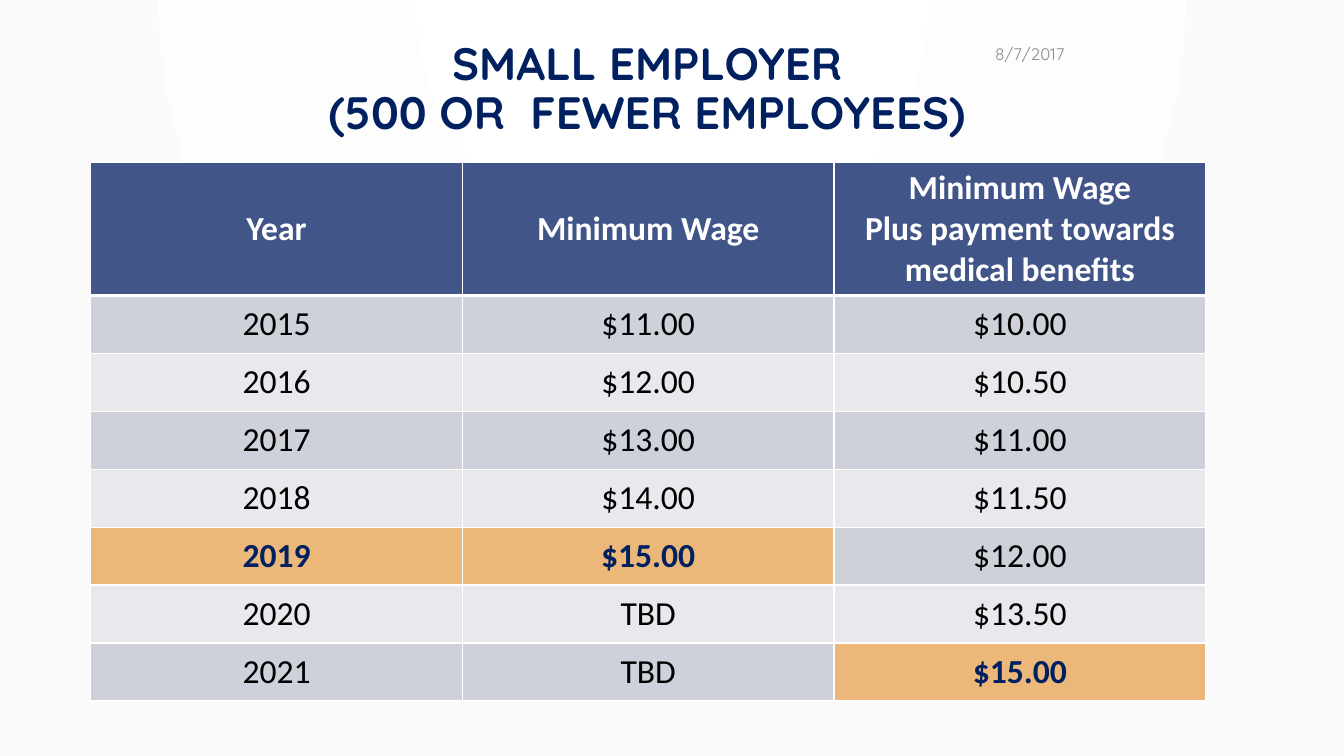
from dataclasses import dataclass

from lxml.etree import SubElement
from pptx import Presentation
from pptx.dml.color import RGBColor
from pptx.enum.text import MSO_ANCHOR, MSO_AUTO_SIZE, PP_ALIGN
from pptx.oxml import parse_xml
from pptx.oxml.ns import nsdecls, qn
from pptx.util import Pt

NAVY = RGBColor(0x00, 0x20, 0x60)
BLACK = RGBColor(0x00, 0x00, 0x00)
WHITE = RGBColor(0xFF, 0xFF, 0xFF)
PALE = RGBColor(0xFA, 0xFA, 0xFA)
GRAY = RGBColor(0x8C, 0x8C, 0x8C)
HEADER_BLUE = RGBColor(0x41, 0x55, 0x88)
BAND_DARK = RGBColor(0xCF, 0xD1, 0xDA)
BAND_LIGHT = RGBColor(0xE9, 0xE9, 0xED)
ORANGE = RGBColor(0xEC, 0xB8, 0x7A)


@dataclass(frozen=True)
class TextStyle:
    font: str
    size: float
    color: RGBColor
    bold: bool = False
    align: PP_ALIGN = PP_ALIGN.CENTER


@dataclass(frozen=True)
class CellStyle:
    fill: RGBColor
    text: TextStyle


TITLE = TextStyle("Quicksand", 32.4, NAVY, bold=True)
DATE = TextStyle("Quicksand", 12, GRAY, align=PP_ALIGN.RIGHT)
PLAIN = TextStyle("Calibri", 24, BLACK)
HEADER = CellStyle(HEADER_BLUE, TextStyle("Calibri", 24, WHITE, bold=True))
BANDS = (CellStyle(BAND_DARK, PLAIN), CellStyle(BAND_LIGHT, PLAIN))
REACHED = CellStyle(ORANGE, TextStyle("Calibri", 24, NAVY, bold=True))

WAGES = [
    ("Year", "Minimum Wage", "Minimum Wage\nPlus payment towards medical benefits"),
    ("2015", "$11.00", "$10.00"),
    ("2016", "$12.00", "$10.50"),
    ("2017", "$13.00", "$11.00"),
    ("2018", "$14.00", "$11.50"),
    ("2019", "$15.00", "$12.00"),
    ("2020", "TBD", "$13.50"),
    ("2021", "TBD", "$15.00"),
]
REACHED_CELLS = {(5, 0), (5, 1), (7, 2)}
COLUMN_WIDTH, HEADER_HEIGHT, ROW_HEIGHT = 265.5, 92.2, 41.4
THIN, THICK = 1, 3


def write_text(frame, text: str, style: TextStyle) -> None:
    frame.text = text
    formats = {"name": style.font, "size": Pt(style.size), "bold": style.bold}
    for paragraph in frame.paragraphs:
        paragraph.alignment = style.align
        for run in paragraph.runs:
            for attribute, value in formats.items():
                setattr(run.font, attribute, value)
            run.font.color.rgb = style.color


def place(shape, left: float, top: float, width: float, height: float) -> None:
    box = {"left": left, "top": top, "width": width, "height": height}
    for attribute, value in box.items():
        setattr(shape, attribute, Pt(value))


def set_borders(cell, row: int) -> None:
    widths = {
        "lnL": THIN,
        "lnR": THIN,
        "lnT": THICK if row == 1 else THIN,
        "lnB": THICK if row == 0 else THIN,
    }
    properties = cell._tc.get_or_add_tcPr()
    for index, (side, width) in enumerate(widths.items()):
        line = parse_xml(f'<a:{side} {nsdecls("a")} w="{Pt(width)}"/>')
        fill = SubElement(line, qn("a:solidFill"))
        SubElement(fill, qn("a:srgbClr"), val=str(WHITE))
        properties.insert(index, line)


def cell_style(row: int, column: int) -> CellStyle:
    if row == 0:
        return HEADER
    if (row, column) in REACHED_CELLS:
        return REACHED
    return BANDS[(row - 1) % 2]


def add_background(slide) -> None:
    fill = slide.background.fill
    fill.gradient()
    for stop, color in zip(fill.gradient_stops, (WHITE, PALE)):
        stop.color.rgb = color
    gradient = slide.element.find(".//" + qn("a:gradFill"))
    radial = parse_xml(
        f'<a:path {nsdecls("a")} path="circle">'
        '<a:fillToRect l="43000" t="0" r="43000" b="100000"/></a:path>'
    )
    gradient.replace(gradient.find(qn("a:lin")), radial)


def add_title(slide) -> None:
    title = slide.shapes.title
    place(title, 84.2, 25.9, 756, 65.5)
    frame = title.text_frame
    formats = {
        "auto_size": MSO_AUTO_SIZE.NONE,
        "word_wrap": True,
        "vertical_anchor": MSO_ANCHOR.TOP,
    }
    for attribute, value in formats.items():
        setattr(frame, attribute, value)
    write_text(frame, "SMALL EMPLOYER\v(500 OR  FEWER EMPLOYEES)", TITLE)
    frame.paragraphs[0].line_spacing = 0.9


def add_wage_table(slide) -> None:
    rows, columns = len(WAGES), len(WAGES[0])
    wage_table = slide.shapes.add_table(
        rows, columns, Pt(64.8), Pt(115.9), Pt(columns * COLUMN_WIDTH),
        Pt(HEADER_HEIGHT + (rows - 1) * ROW_HEIGHT),
    ).table
    for column in wage_table.columns:
        column.width = Pt(COLUMN_WIDTH)
    for row, values in enumerate(WAGES):
        wage_table.rows[row].height = Pt(ROW_HEIGHT if row else HEADER_HEIGHT)
        for column, value in enumerate(values):
            cell = wage_table.cell(row, column)
            style = cell_style(row, column)
            cell.fill.solid()
            cell.fill.fore_color.rgb = style.fill
            cell.vertical_anchor = MSO_ANCHOR.MIDDLE
            write_text(cell.text_frame, value, style.text)
            set_borders(cell, row)


def add_date(slide) -> None:
    date = slide.shapes.add_textbox(Pt(569.5), Pt(25.9), Pt(198), Pt(24.5))
    date.text_frame.word_wrap = True
    date.text_frame.vertical_anchor = MSO_ANCHOR.MIDDLE
    write_text(date.text_frame, "8/7/2017", DATE)


def main() -> None:
    presentation = Presentation()
    presentation.slide_width, presentation.slide_height = Pt(960), Pt(540)
    slide = presentation.slides.add_slide(presentation.slide_layouts[5])
    add_background(slide)
    add_title(slide)
    add_wage_table(slide)
    add_date(slide)
    presentation.save("out.pptx")


if __name__ == "__main__":
    main()
